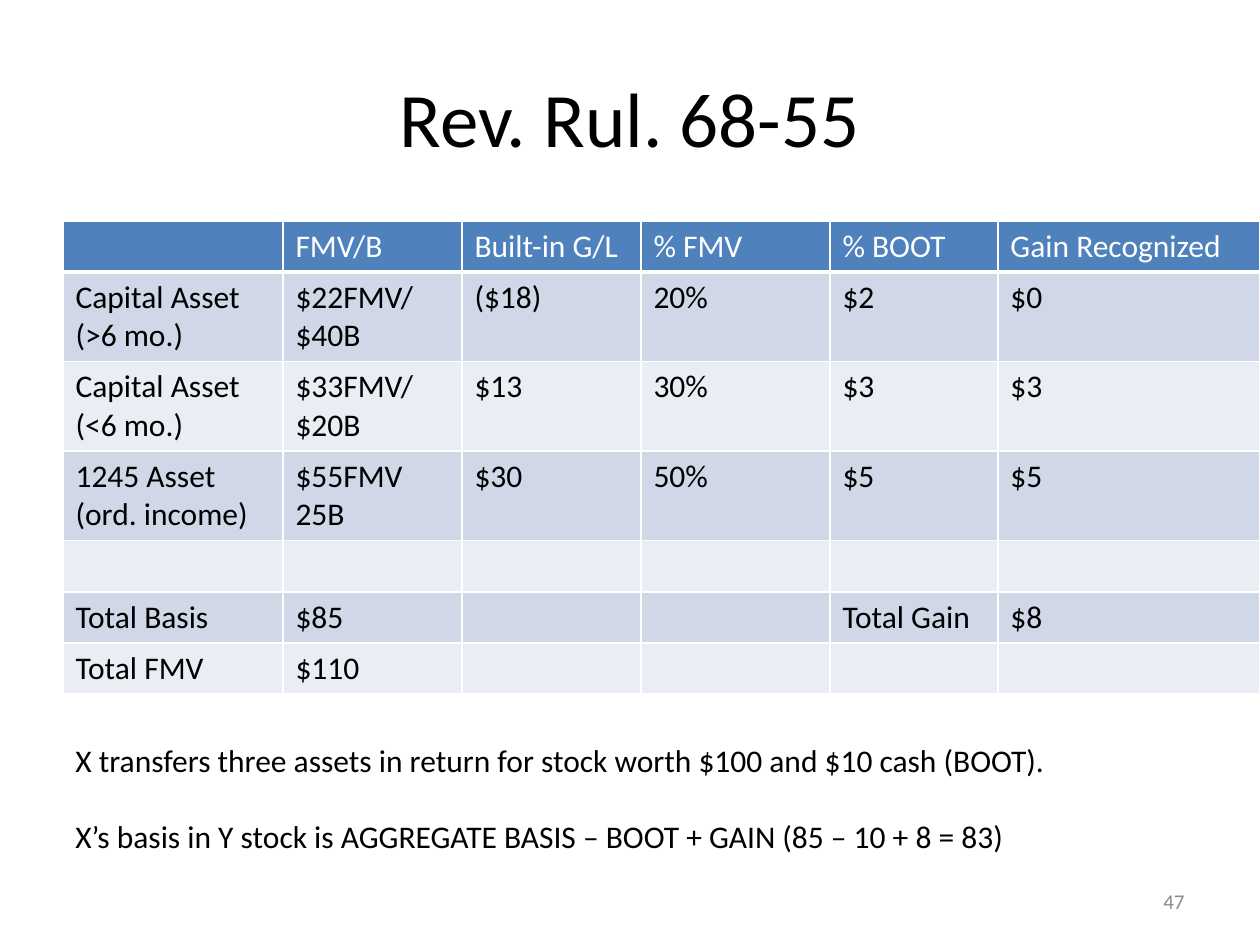
from dataclasses import dataclass

from lxml import etree
from pptx import Presentation
from pptx import util as u
from pptx.dml.color import RGBColor
from pptx.enum import text
from pptx.oxml import ns


@dataclass(frozen=True)
class Theme:
    font: str = "Calibri"
    ink: str = "000000"
    white: str = "FFFFFF"
    muted: str = "8C8C8C"
    header: str = "4F81BD"
    bands: tuple = ("D0D8E8", "E9EDF4")
    title_size: int = 44
    body_size: int = 18
    number_size: int = 12
    rule: int = 1
    header_rule: int = 3


THEME = Theme()
PX_PER_INCH = 126
COLUMNS = [220, 179, 179, 189, 168, 262]
ROW_HEIGHT = 51
ROWS = [
    ["", "FMV/B", "Built-in G/L", "% FMV", "% BOOT", "Gain Recognized"],
    ["Capital Asset (>6 mo.)", "$22FMV/\n$40B", "($18)", "20%", "$2", "$0"],
    ["Capital Asset\n(<6 mo.)", "$33FMV/\n$20B", "$13", "30%", "$3", "$3"],
    ["1245 Asset\n(ord. income)", "$55FMV\n25B", "$30", "50%", "$5", "$5"],
    [""] * 6,
    ["Total Basis", "$85", "", "", "Total Gain", "$8"],
    ["Total FMV", "$110", "", "", "", ""],
]
NOTES = [
    "X transfers three assets in return for stock worth $100 and $10 cash (BOOT).",
    "X’s basis in Y stock is AGGREGATE BASIS – BOOT + GAIN (85 – 10 + 8 = 83)",
]


def px(n):
    return round(n * u.Inches(1) / PX_PER_INCH)


def set_attrs(obj, values):
    for name, value in values.items():
        setattr(obj, name, value)


def place(s, box):
    set_attrs(s, dict(zip(("left", "top", "width", "height"), map(px, box))))


def write(tf, content, size, color, **paragraph_format):
    tf.text = content
    for p in tf.paragraphs:
        set_attrs(p, paragraph_format)
        set_attrs(p.font, {"name": THEME.font, "size": u.Pt(size), "bold": False})
        p.font.color.rgb = RGBColor.from_string(color)


def set_borders(cell, widths):
    tc_pr = cell._tc.get_or_add_tcPr()
    for i, (side, width) in enumerate(zip("LRTB", widths)):
        ln = etree.Element(ns.qn(f"a:ln{side}"), w=str(u.Pt(width)))
        fill = etree.SubElement(ln, ns.qn("a:solidFill"))
        etree.SubElement(fill, ns.qn("a:srgbClr"), val=THEME.white)
        tc_pr.insert(i, ln)


def add_title(slide, box):
    s = slide.shapes.title
    place(s, box)
    s.text_frame.vertical_anchor = text.MSO_ANCHOR.MIDDLE
    write(s.text_frame, "Rev. Rul. 68-55", THEME.title_size, THEME.ink,
          alignment=text.PP_ALIGN.CENTER)


def add_gain_table(slide, box):
    table = slide.shapes.add_table(len(ROWS), len(COLUMNS), *map(px, box)).table
    set_attrs(table, {"first_row": False, "horz_banding": False})
    for column, width in zip(table.columns, COLUMNS):
        column.width = px(width)
    for i, (row, values) in enumerate(zip(table.rows, ROWS)):
        row.height = px(ROW_HEIGHT)
        is_header = i == 0
        fill = THEME.header if is_header else THEME.bands[(i - 1) % 2]
        color = THEME.white if is_header else THEME.ink
        bottom = THEME.header_rule if is_header else THEME.rule
        for cell, value in zip(row.cells, values):
            write(cell.text_frame, value, THEME.body_size, color)
            cell.fill.solid()
            cell.fill.fore_color.rgb = RGBColor.from_string(fill)
            set_borders(cell, [THEME.rule] * 3 + [bottom])


def add_slide_number(slide, box):
    tf = slide.shapes.add_textbox(*map(px, box)).text_frame
    set_attrs(tf, {"word_wrap": True, "vertical_anchor": text.MSO_ANCHOR.MIDDLE})
    write(tf, "47", THEME.number_size, THEME.muted, alignment=text.PP_ALIGN.RIGHT)


def add_notes(slide, box):
    tf = slide.shapes.add_textbox(*map(px, box)).text_frame
    set_attrs(tf, {"word_wrap": True, "auto_size": text.MSO_AUTO_SIZE.SHAPE_TO_FIT_TEXT})
    write(tf, "\n".join(NOTES), THEME.body_size, THEME.ink)
    tf.paragraphs[1].space_before = u.Pt(22)


def main():
    prs = Presentation()
    set_attrs(prs, {"slide_width": u.Inches(10), "slide_height": u.Inches(7.5)})
    slide = prs.slides.add_slide(prs.slide_layouts.get_by_name("Title Only"))
    add_title(slide, (63, 38, 1134, 158))
    add_gain_table(slide, (63, 221, sum(COLUMNS), ROW_HEIGHT * len(ROWS)))
    add_slide_number(slide, (903, 876, 294, 50))
    add_notes(slide, (63, 735, 1040, 127))
    prs.save("out.pptx")


if __name__ == "__main__":
    main()
